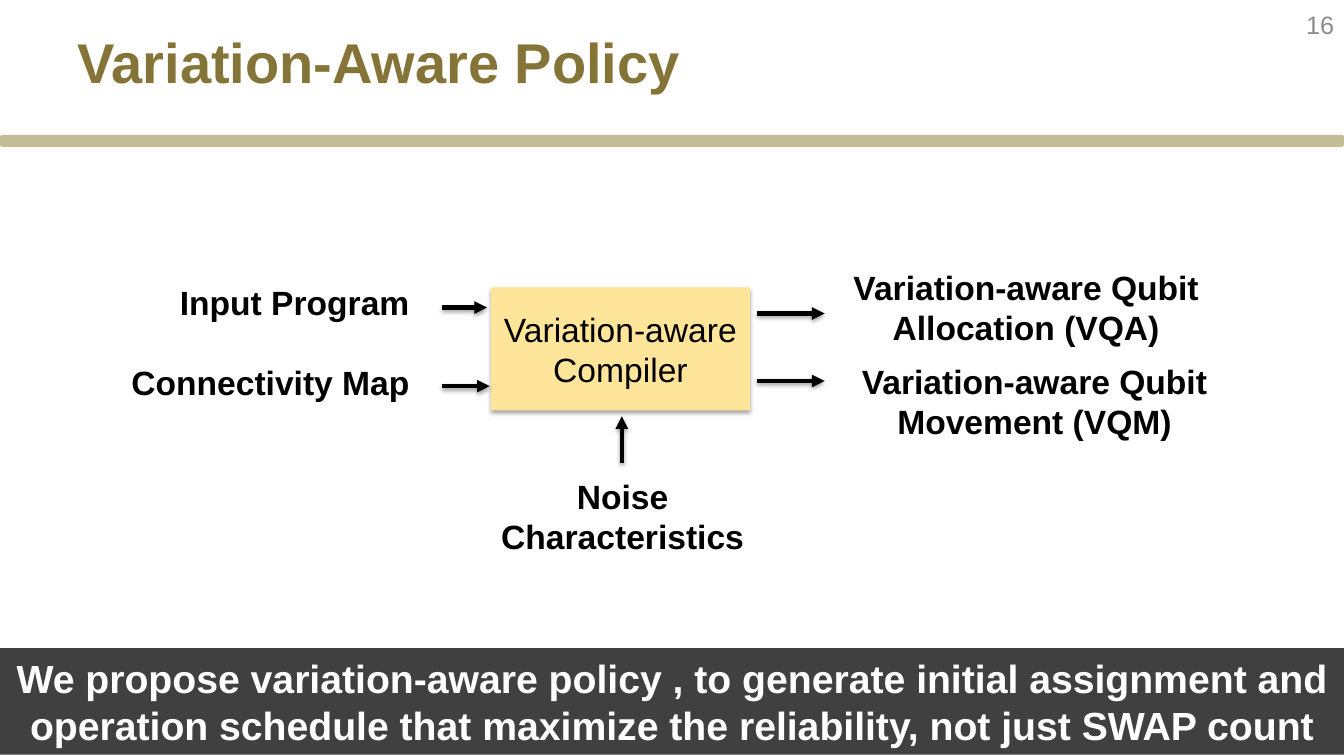
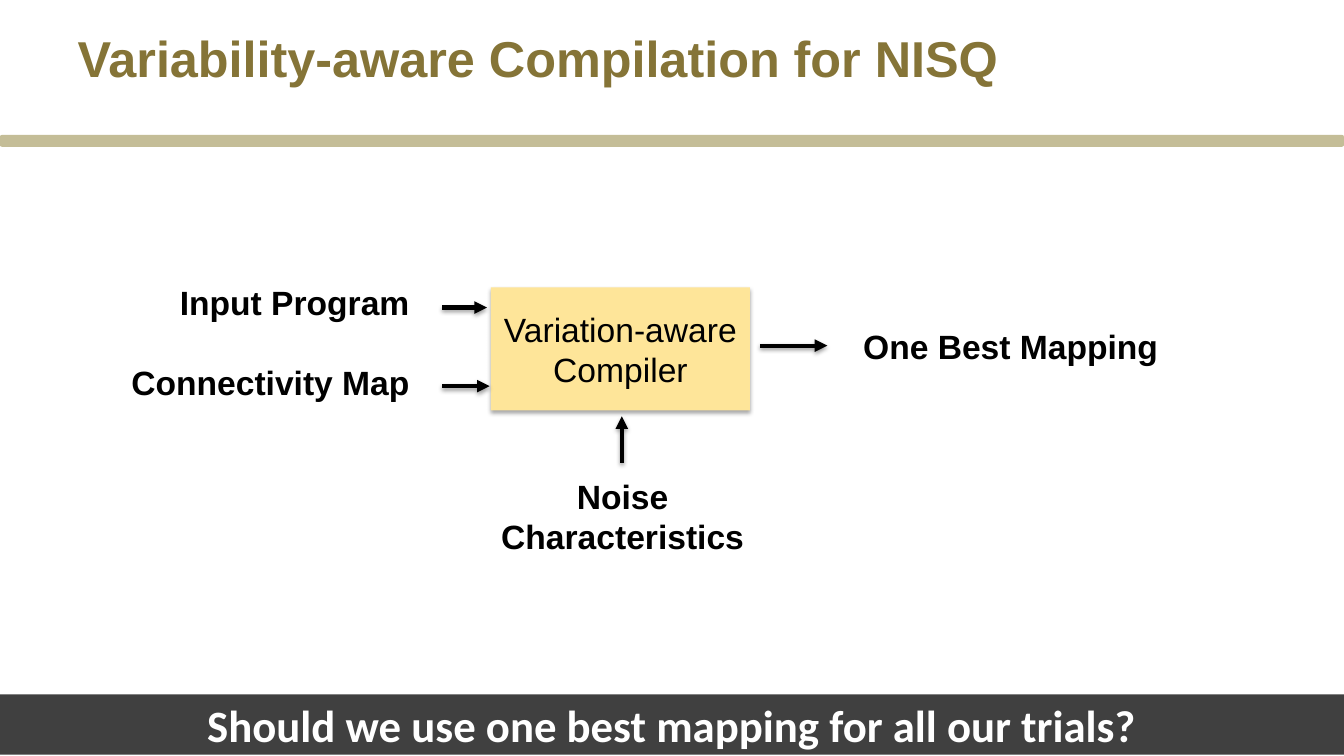
from dataclasses import dataclass

import lxml.etree
import pptx
import pptx.dml.color
import pptx.enum.shapes
import pptx.enum.text
import pptx.oxml
import pptx.oxml.ns
import pptx.util

Cm = pptx.util.Cm
SHAPE = pptx.enum.shapes.MSO_SHAPE
ALIGN = pptx.enum.text.PP_ALIGN
ANCHOR = pptx.enum.text.MSO_ANCHOR
rgb = pptx.dml.color.RGBColor.from_string


@dataclass(frozen=True)
class Theme:
    title: str = "857437"
    rule: str = "C4BD97"
    number: str = "8C8C8C"
    ink: str = "000000"
    compiler: str = "FEE599"
    band: str = "404040"
    band_text: str = "FFFFFF"
    font: str = "Arial"
    body_size: int = 24
    number_size: int = 18
    arrow_width: int = 3


THEME = Theme()


def add_box(slide, place, lines, size=THEME.body_size, color=THEME.ink, bold=True,
            align=ALIGN.CENTER, fill=None, kind=SHAPE.RECTANGLE, font=THEME.font):
    """Add a text box, or a filled shape when a fill is given."""
    place = [Cm(length) for length in place]
    if fill is None:
        box = slide.shapes.add_textbox(*place)
    else:
        box = slide.shapes.add_shape(kind, *place)
        box.shadow.inherit = False
        box.fill.solid()
        box.fill.fore_color.rgb = rgb(fill)
        box.line.fill.background()
    frame = box.text_frame
    frame.word_wrap = True
    frame.vertical_anchor = ANCHOR.TOP if fill is None else ANCHOR.MIDDLE
    for index, line in enumerate(lines):
        paragraph = frame.paragraphs[0] if index == 0 else frame.add_paragraph()
        paragraph.alignment = align
        run = paragraph.add_run()
        run.text = line
        run.font.name = font
        run.font.size = pptx.util.Pt(size)
        run.font.bold = bold
        run.font.color.rgb = rgb(color)
    return box


def cast_shadow(shape, distance, opacity):
    """Give a shape a soft shadow straight below it."""
    properties = shape.element.spPr
    for old in properties.findall(pptx.oxml.ns.qn("a:effectLst")):
        properties.remove(old)
    properties.append(pptx.oxml.parse_xml(
        f'<a:effectLst {pptx.oxml.ns.nsdecls("a")}>'
        f'<a:outerShdw blurRad="40000" dist="{distance}" dir="5400000" rotWithShape="0">'
        f'<a:srgbClr val="{THEME.ink}"><a:alpha val="{opacity * 1000}"/></a:srgbClr>'
        '</a:outerShdw></a:effectLst>'))


# What differs from slide to slide
slides = [
    {
        "title": "Variation-Aware Policy", "title_size": 40, "number": "16",
        "outputs": [("Variation-aware Qubit Allocation (VQA)", (20.46, 6.6, 10.8, 2.31)),
                    ("Variation-aware Qubit Movement (VQM)", (20.67, 8.97, 10.8, 2.31))],
        "output_arrows": [(19.08, 7.9, 20.78, 7.9), (19.08, 9.6, 20.78, 9.6)],
        "message": "We propose variation-aware policy , to generate initial assignment and "
                   "operation schedule that maximize the reliability, not just SWAP count",
        "message_size": 28, "message_font": "Arial", "band_top": 16.33, "band_height": 2.69,
    },
    {
        "title": "Variability-aware Compilation for NISQ", "title_size": 36, "number": None,
        "outputs": [("One Best Mapping", (20.07, 8.08, 10.8, 1.27))],
        "output_arrows": [(19.15, 8.71, 20.85, 8.71)],
        "message": "Should we use one best mapping for all our trials?",
        "message_size": 32, "message_font": "Calibri", "band_top": 17.5, "band_height": 1.52,
    },
]

# What every slide shares
inputs = [("Input Program", 6.99), ("Connectivity Map", 8.99)]
input_arrows = [(11.15, 7.75, 12.27, 7.75), (11.15, 9.73, 12.34, 9.73)]
noise_arrow = (15.67, 11.66, 15.67, 10.49)
slide_width = 33.87

deck = pptx.Presentation()
deck.slide_width = Cm(slide_width)
deck.slide_height = Cm(19.05)
title_only = deck.slide_layouts[5]

for content in slides:
    slide = deck.slides.add_slide(title_only)

    # Title, rule and page number
    add_box(slide, (0, 3.4, slide_width, 0.3), [], fill=THEME.rule,
            kind=SHAPE.ROUNDED_RECTANGLE)
    title = slide.shapes.title
    title.left, title.top, title.width, title.height = Cm(1.7), Cm(0.56), Cm(27.46), Cm(3.18)
    heading = title.text_frame
    heading.auto_size = pptx.enum.text.MSO_AUTO_SIZE.NONE
    heading.vertical_anchor = ANCHOR.TOP
    heading.paragraphs[0].alignment = ALIGN.LEFT
    run = heading.paragraphs[0].add_run()
    run.text = content["title"]
    run.font.name = THEME.font
    run.font.size = pptx.util.Pt(content["title_size"])
    run.font.bold = True
    run.font.color.rgb = rgb(THEME.title)
    if content["number"]:
        number = add_box(slide, (29.5, 0, 4.37, 1.22), [content["number"]], THEME.number_size,
                         THEME.number, bold=False, align=ALIGN.RIGHT)
        number.text_frame.vertical_anchor = ANCHOR.MIDDLE

    # Compiler with its inputs and outputs
    compiler = add_box(slide, (12.37, 7.24, 6.53, 3.1), ["Variation-aware", "Compiler"],
                       bold=False, fill=THEME.compiler)
    cast_shadow(compiler, 23000, 35)
    for label, top in inputs:
        add_box(slide, (2.37, top, 8.2, 1.27), [label], align=ALIGN.RIGHT)
    add_box(slide, (12.07, 11.86, 7.24, 2.31), ["Noise Characteristics"])
    for label, place in content["outputs"]:
        add_box(slide, place, [label])

    # Arrows
    for ends in [*input_arrows, noise_arrow, *content["output_arrows"]]:
        arrow = slide.shapes.add_connector(pptx.enum.shapes.MSO_CONNECTOR.STRAIGHT,
                                           *[Cm(length) for length in ends])
        arrow.line.width = pptx.util.Pt(THEME.arrow_width)
        arrow.line.color.rgb = rgb(THEME.ink)
        lxml.etree.SubElement(arrow.line._get_or_add_ln(), pptx.oxml.ns.qn("a:tailEnd"),
                              type="triangle")
        cast_shadow(arrow, 20000, 38)

    # Message band
    add_box(slide, (0, content["band_top"], slide_width, content["band_height"]),
            [content["message"]], content["message_size"], THEME.band_text,
            fill=THEME.band, font=content["message_font"])

deck.save("out.pptx")
